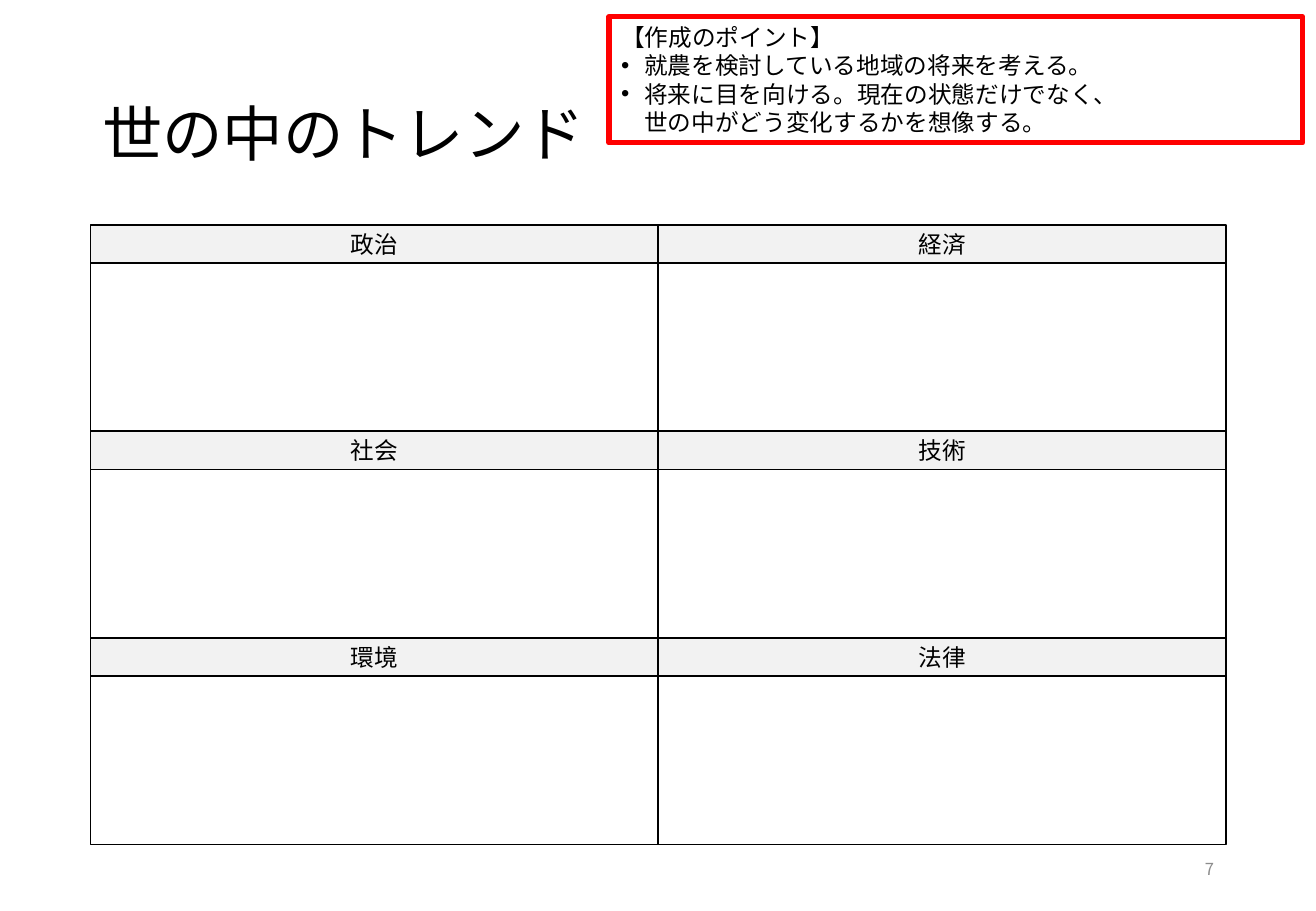
from dataclasses import dataclass

from lxml import etree
from pptx import Presentation
from pptx.dml.color import RGBColor
from pptx.enum import shapes, text
from pptx.oxml import ns
from pptx.util import Cm, Length, Pt

BLACK = RGBColor(0x00, 0x00, 0x00)
WHITE = RGBColor(0xFF, 0xFF, 0xFF)
RED = RGBColor(0xFF, 0x00, 0x00)
HEADER_GRAY = RGBColor(0xF2, 0xF2, 0xF2)
NUMBER_GRAY = RGBColor(0x8C, 0x8C, 0x8C)
FONT = "Noto Sans CJK JP"

GRID_LEFT, GRID_TOP = 1.89, 4.7
COLUMN_WIDTH, HEADER_HEIGHT, ANSWER_HEIGHT = 11.87, 0.8, 3.52
BULLET_INDENT = Cm(0.48)


@dataclass(frozen=True)
class Theme:
    label: str
    row: int
    column: int


@dataclass(frozen=True)
class Point:
    wording: str
    bulleted: bool = True


THEMES = [
    Theme(label, *divmod(index, 2))
    for index, label in enumerate(["政治", "経済", "社会", "技術", "環境", "法律"])
]
POINTS = [
    Point("【作成のポイント】", bulleted=False),
    Point("就農を検討している地域の将来を考える。"),
    Point("将来に目を向ける。現在の状態だけでなく、\n世の中がどう変化するかを想像する。"),
]


def apply(target, values: dict) -> None:
    for name, value in values.items():
        setattr(target, name, value)


def place(shape, left: float, top: float, width: float, height: float) -> None:
    apply(shape, {"left": Cm(left), "top": Cm(top), "width": Cm(width), "height": Cm(height)})


def outline(shape, fill: RGBColor, line: RGBColor, weight: Length) -> None:
    shape.fill.solid()
    shape.fill.fore_color.rgb = fill
    shape.line.color.rgb = line
    shape.line.width = weight


def write(paragraph, wording: str, size: float, color: RGBColor = BLACK, **layout) -> None:
    paragraph.text = wording
    apply(paragraph, layout)
    for run in paragraph.runs:
        apply(run.font, {"name": FONT, "size": Pt(size)})
        run.font.color.rgb = color
        east_asian = etree.SubElement(run.font._element, ns.qn("a:ea"))
        east_asian.set("typeface", FONT)


def set_bullet(paragraph, bulleted: bool) -> None:
    properties = paragraph._p.get_or_add_pPr()
    indent = BULLET_INDENT if bulleted else 0
    properties.set("marL", str(int(indent)))
    properties.set("indent", str(-int(indent)))
    if bulleted:
        etree.SubElement(properties, ns.qn("a:buFont")).set("typeface", "Arial")
        etree.SubElement(properties, ns.qn("a:buChar")).set("char", "•")
    else:
        etree.SubElement(properties, ns.qn("a:buNone"))


def add_box(slide, left: float, top: float, height: float, fill: RGBColor):
    box = slide.shapes.add_shape(shapes.MSO_SHAPE.RECTANGLE, 0, 0, 0, 0)
    place(box, left, top, COLUMN_WIDTH, height)
    box.shadow.inherit = False
    outline(box, fill, BLACK, Pt(1))
    return box


def add_theme(slide, theme: Theme) -> None:
    """Draw a labelled header with its empty answer box below."""
    left = GRID_LEFT + theme.column * COLUMN_WIDTH
    top = GRID_TOP + theme.row * (HEADER_HEIGHT + ANSWER_HEIGHT)
    add_box(slide, left, top + HEADER_HEIGHT, ANSWER_HEIGHT, WHITE)
    header = add_box(slide, left, top, HEADER_HEIGHT, HEADER_GRAY)
    header.text_frame.vertical_anchor = text.MSO_ANCHOR.MIDDLE
    write(header.text_frame.paragraphs[0], theme.label, 14, alignment=text.PP_ALIGN.CENTER)


def fill_title(title) -> None:
    place(title, 1.88, 1.83, 23.72, 2.08)
    apply(title.text_frame, {
        "vertical_anchor": text.MSO_ANCHOR.MIDDLE,
        "auto_size": text.MSO_AUTO_SIZE.NONE,
        "word_wrap": True,
    })
    write(title.text_frame.paragraphs[0], "世の中のトレンド", 35.8,
          alignment=text.PP_ALIGN.LEFT, line_spacing=0.9)


def fill_advice(advice) -> None:
    place(advice, 12.73, 0.35, 14.5, 2.64)
    outline(advice, WHITE, RED, Pt(3))
    frame = advice.text_frame
    apply(frame, {
        "vertical_anchor": text.MSO_ANCHOR.TOP,
        "auto_size": text.MSO_AUTO_SIZE.NONE,
        "word_wrap": True,
    })
    for index, point in enumerate(POINTS):
        paragraph = frame.add_paragraph() if index else frame.paragraphs[0]
        write(paragraph, point.wording, 14, alignment=text.PP_ALIGN.LEFT,
              line_spacing=Pt(16.8), space_before=Pt(0))
        set_bullet(paragraph, point.bulleted)


def add_page_number(slide) -> None:
    number = slide.shapes.add_textbox(Cm(19.43), Cm(17.65), Cm(6.2), Cm(1.02))
    apply(number.text_frame, {"vertical_anchor": text.MSO_ANCHOR.MIDDLE, "word_wrap": True})
    write(number.text_frame.paragraphs[0], "7", 9.8, NUMBER_GRAY,
          alignment=text.PP_ALIGN.RIGHT)


def main() -> None:
    deck = Presentation()
    apply(deck, {"slide_width": Cm(27.51), "slide_height": Cm(19.05)})
    slide = deck.slides.add_slide(deck.slide_layouts[1])
    fill_title(slide.shapes.title)
    fill_advice(slide.placeholders[1])
    for theme in THEMES:
        add_theme(slide, theme)
    add_page_number(slide)
    deck.save("out.pptx")


if __name__ == "__main__":
    main()
